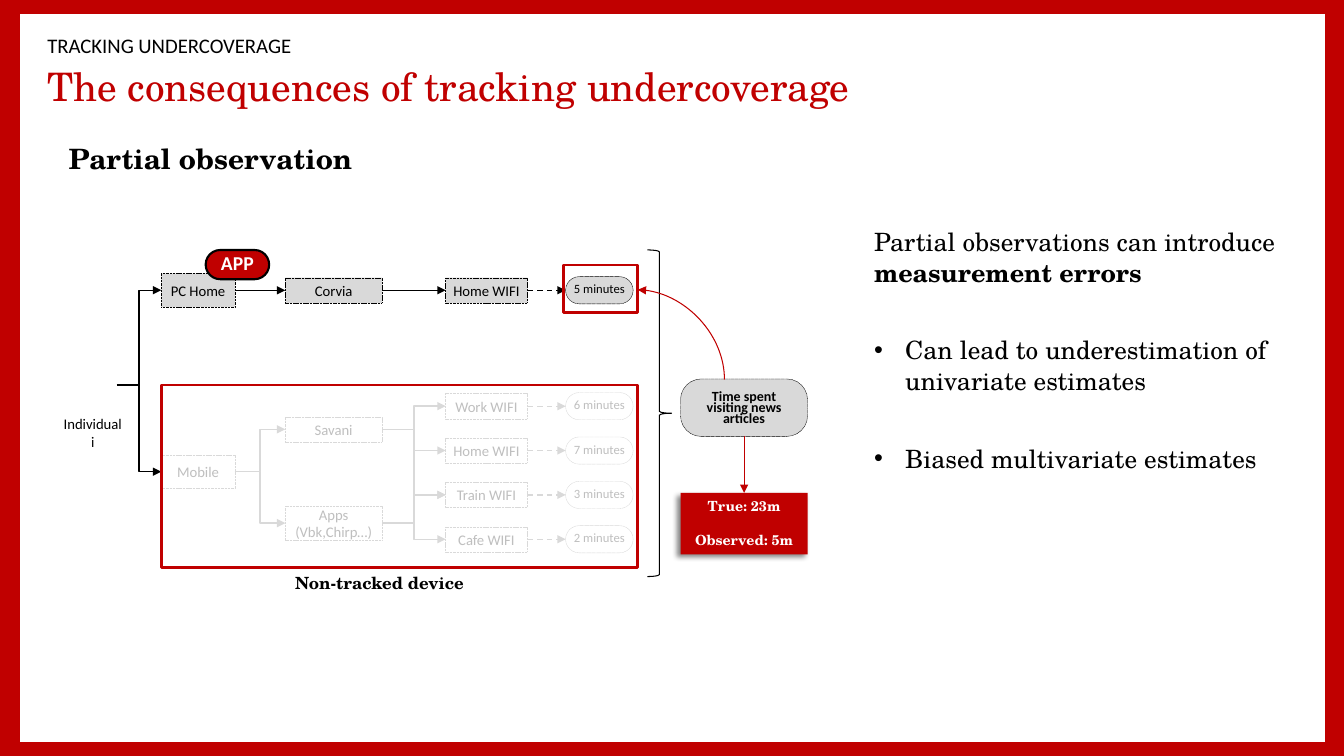
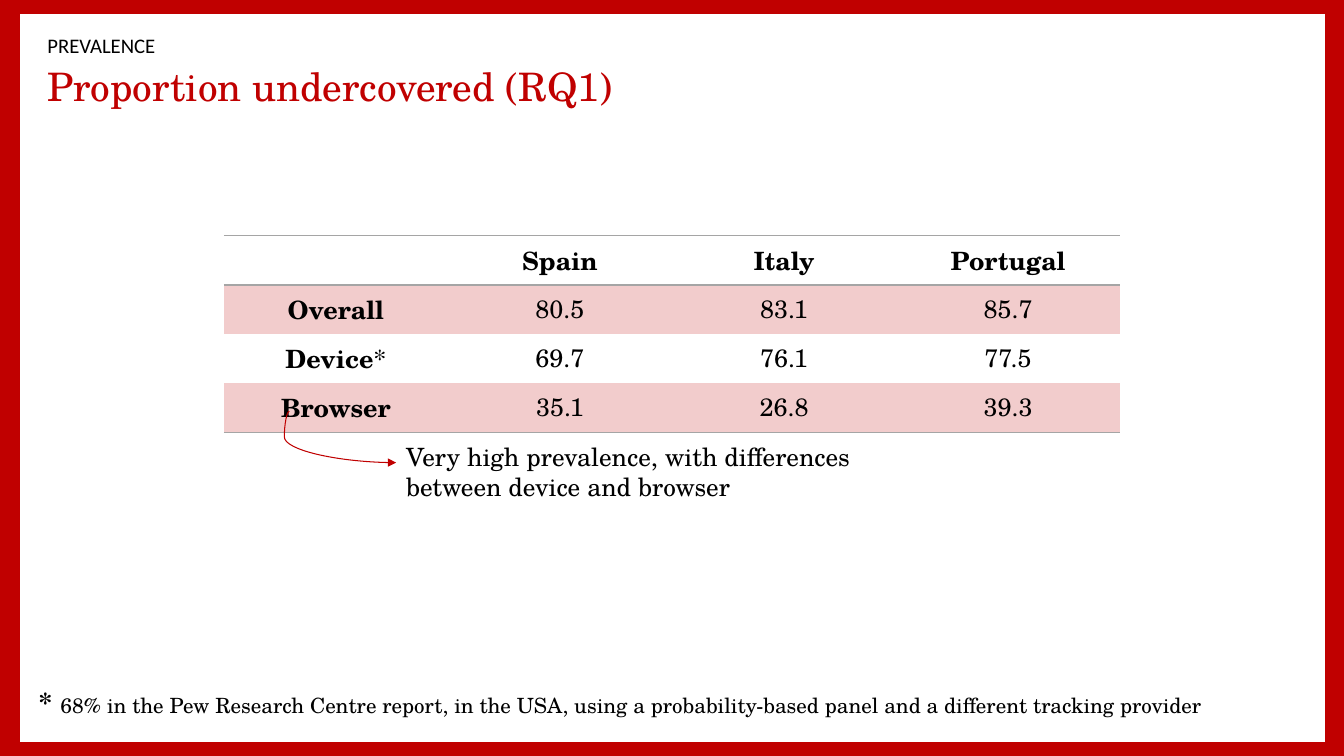
import pptx
import pptx.dml.color
import pptx.enum.dml
import pptx.enum.shapes
import pptx.enum.text
import pptx.oxml
import pptx.oxml.ns
import pptx.util

Inches = pptx.util.Inches
Pt = pptx.util.Pt
SHAPE = pptx.enum.shapes.MSO_SHAPE
CONNECTOR = pptx.enum.shapes.MSO_CONNECTOR
DASH = pptx.enum.dml.MSO_LINE
ALIGN = pptx.enum.text.PP_ALIGN
ANCHOR = pptx.enum.text.MSO_ANCHOR
qn = pptx.oxml.ns.qn
nsdecls = pptx.oxml.ns.nsdecls
parse_xml = pptx.oxml.parse_xml
color = pptx.dml.color.RGBColor.from_string

RED, BLACK, WHITE = "C00000", "000000", "FFFFFF"
GREY, FADED, PINK, RULE = "D9D9D9", "BFBFBF", "F2CCCC", "A5A5A5"
SERIF, SANS = "TeX Gyre Schola", "Calibri"
CENTERED = {"alignment": ALIGN.CENTER}
TIGHT = {"word_wrap": True, "vertical_anchor": ANCHOR.MIDDLE, "margin_left": Inches(0.04),
         "margin_right": Inches(0.04), "margin_top": Inches(0.04), "margin_bottom": Inches(0.04)}


def write(frame, paragraphs, size, font=SERIF, ink=BLACK, bold=False, layout=None, box=None):
    for name, value in {"word_wrap": True, **(box or {})}.items():
        setattr(frame, name, value)
    for index, runs in enumerate(paragraphs):
        paragraph = frame.paragraphs[0] if index == 0 else frame.add_paragraph()
        for name, value in (layout or {}).items():
            setattr(paragraph, name, value)
        for text, changes in runs:
            run = paragraph.add_run()
            run.text = text
            run.font.color.rgb = color(ink)
            values = {"name": font, "size": Pt(size), "bold": bold, **changes}
            for name, value in values.items():
                setattr(run.font, name, value)


def style(shape, fill=None, line=None, width=0.25, dash=None):
    shape.shadow.inherit = False
    if fill:
        shape.fill.solid()
        shape.fill.fore_color.rgb = color(fill)
    else:
        shape.fill.background()
    if line:
        shape.line.color.rgb = color(line)
        shape.line.width = Pt(width)
        shape.line.dash_style = dash
    else:
        shape.line.fill.background()


presentation = pptx.Presentation()
presentation.slide_width = Inches(13.33)
presentation.slide_height = Inches(7.5)

layout = presentation.slide_layouts.get_by_name("Two Content")
layout.background.fill.solid()
layout.background.fill.fore_color.rgb = color(RED)
for idx, place in {0: (0.37, 0.65, 11.67, 0.47), 1: (0.37, 0.32, 11.28, 0.31)}.items():
    placeholder = layout.placeholders.get(idx=idx)
    for name, value in zip(("left", "top", "width", "height"), place):
        setattr(placeholder, name, Inches(value))

pages = [
    ("The consequences of tracking undercoverage", "TRACKING UNDERCOVERAGE",
     [("Partial observation", {"bold": True})], 20, (0.58, 1.39, 12.17, 5.21)),
    ("Proportion undercovered (RQ1)", "PREVALENCE",
     [("* ", {"bold": True, "size": Pt(20)}),
      ("68% in the Pew Research Centre report, in the USA, using a probability-based panel "
       "and a different tracking provider", {})], 15, (0.28, 6.79, 12.17, 0.47)),
]
for title, kicker, body, size, place in pages:
    slide = presentation.slides.add_slide(layout)
    for name, value in zip(("left", "top", "width", "height"), place):
        setattr(slide.placeholders[2], name, Inches(value))
    left_aligned = {"alignment": ALIGN.LEFT, "line_spacing": 0.9, "space_before": Pt(0)}
    fixed = {"auto_size": pptx.enum.text.MSO_AUTO_SIZE.NONE, "vertical_anchor": ANCHOR.MIDDLE}
    write(slide.shapes.title.text_frame, [[(title, {})]], 28, ink=RED,
          layout=left_aligned, box=fixed)
    write(slide.placeholders[1].text_frame, [[(kicker, {})]], 14.8, SANS,
          layout={**left_aligned, "line_spacing": 0.8}, box=fixed)
    write(slide.placeholders[2].text_frame, [body], size,
          layout=left_aligned, box={**fixed, "vertical_anchor": ANCHOR.TOP})
    for idx in (1, 2):
        properties = slide.placeholders[idx].text_frame.paragraphs[0]._p.get_or_add_pPr()
        properties.set("marL", "0")
        properties.set("indent", "0")
        properties.append(parse_xml(f"<a:buNone {nsdecls('a')}/>"))

diagram_slide, table_slide = presentation.slides
panel = diagram_slide.shapes.add_shape(
    SHAPE.RECTANGLE, Inches(0.2), Inches(0.14), Inches(12.94), Inches(7.22))
style(panel, WHITE)
layout.shapes._spTree.insert(2, panel._element)

shapes = diagram_slide.shapes
nodes = {}
node_rows = [
    ("computer", "PC Home", 1.6, 2.88, 0.73, 0.33, True),
    ("phone", "Mobile", 1.6, 4.68, 0.73, 0.33, False),
    ("tracked browser", "Corvia", 2.83, 2.88, 0.96, 0.25, True),
    ("browser", "Savani", 2.83, 4.26, 0.96, 0.25, False),
    ("apps", "Apps (Vbk,Chirp…)", 2.83, 5.19, 0.96, 0.34, False),
    ("tracked wifi", "Home WIFI", 4.42, 2.88, 0.81, 0.25, True),
    ("tracked time", "5 minutes", 5.61, 2.88, 0.67, 0.27, True),
]
networks = [("Work", 6), ("Home", 7), ("Train", 3), ("Cafe", 2)]
for index, (network, minutes) in enumerate(networks):
    middle = 4.03 + 0.44 * index
    node_rows.append((network, f"{network} WIFI", 4.42, middle, 0.81, 0.25, False))
    node_rows.append((f"{network} time", f"{minutes} minutes", 5.61, middle, 0.67, 0.27, False))

for key, text, left, middle, width, height, tracked in node_rows:
    is_time = key.endswith("time")
    node = shapes.add_shape(SHAPE.ROUNDED_RECTANGLE if is_time else SHAPE.RECTANGLE,
                            Inches(left), Inches(middle - height / 2), Inches(width), Inches(height))
    style(node, GREY if tracked else WHITE, BLACK if tracked else GREY, dash=DASH.SQUARE_DOT)
    text_layout, box = CENTERED, TIGHT
    if is_time:
        node.adjustments[0] = 0.5
        text_layout = {**CENTERED, "line_spacing": Pt(6)}
        box = {**TIGHT, "margin_top": Inches(0.08)}
    write(node.text_frame, [[(text, {})]], 9 if is_time else 10.5, SANS,
          BLACK if tracked else FADED, layout=text_layout, box=box)
    nodes[key] = node

connectors = []
links = [
    ("computer", "tracked browser"), ("tracked browser", "tracked wifi"),
    ("tracked wifi", "tracked time"), ("phone", "apps"), ("phone", "browser"),
    ("apps", "Cafe"), ("apps", "Train"),
    ("browser", "Work"), ("browser", "Home"), ("browser", "Train"),
]
links += [(network, f"{network} time") for network, minutes in networks]
for start_key, end_key in links:
    start, end = nodes[start_key], nodes[end_key]
    bent = start_key in ("phone", "apps", "browser")
    connector = shapes.add_connector(
        CONNECTOR.ELBOW if bent else CONNECTOR.STRAIGHT,
        start.left + start.width, start.top + start.height // 2,
        end.left, end.top + end.height // 2)
    connector.begin_connect(start, 3)
    connector.end_connect(end, 1)
    if end_key.endswith("time"):
        connector.line.dash_style = DASH.DASH
    connectors.append((connector, BLACK if "tracked" in end_key else GREY, 1))

for key in ("phone", "computer"):
    device = nodes[key]
    connector = shapes.add_connector(CONNECTOR.ELBOW, Inches(1.16), Inches(3.82),
                                     device.left, device.top + device.height // 2)
    connector.end_connect(device, 1)
    connectors.append((connector, BLACK, 1))

individual = shapes.add_shape(
    SHAPE.RECTANGLE, Inches(0.58), Inches(4.13), Inches(0.68), Inches(0.33))
style(individual, WHITE)
write(individual.text_frame, [[("Individual i", {})]], 10.5, SANS, layout=CENTERED, box=TIGHT)

outcome = shapes.add_shape(
    SHAPE.ROUNDED_RECTANGLE, Inches(6.75), Inches(3.76), Inches(1.26), Inches(0.57))
outcome.adjustments[0] = 0.36
style(outcome, GREY, BLACK, dash=DASH.SQUARE_DOT)
write(outcome.text_frame, [[("Time spent visiting news articles", {})]], 10, SANS, bold=True,
      layout={**CENTERED, "line_spacing": Pt(8)}, box={**TIGHT, "margin_top": Inches(0.08)})

tracker = shapes.add_shape(
    SHAPE.ROUNDED_RECTANGLE, Inches(2.04), Inches(2.48), Inches(0.63), Inches(0.29))
tracker.adjustments[0] = 0.5
style(tracker, RED, BLACK, 1.5)
write(tracker.text_frame, [[("APP", {})]], 14, SANS, WHITE, True,
      {**CENTERED, "line_spacing": Pt(6)}, {**TIGHT, "margin_top": Inches(0.16)})

brace = shapes.add_shape(
    SHAPE.RIGHT_BRACE, Inches(6.42), Inches(2.48), Inches(0.24), Inches(3.24))
brace.adjustments[0] = 0.08
brace.adjustments[1] = 0.5
style(brace, line=BLACK, width=0.75)

for place in ((5.59, 2.63, 0.73, 0.47), (1.6, 3.82, 4.72, 1.81)):
    highlight = shapes.add_shape(SHAPE.RECTANGLE, *map(Inches, place))
    style(highlight, line=RED, width=2)

result = shapes.add_shape(
    SHAPE.RECTANGLE, Inches(6.75), Inches(4.89), Inches(1.26), Inches(0.61))
style(result, RED)
result._element.spPr.find(qn("a:effectLst")).append(parse_xml(
    f'<a:outerShdw {nsdecls("a")} blurRad="50800" dist="38100" dir="8100000" algn="tr" '
    'rotWithShape="0"><a:srgbClr val="000000"><a:alpha val="48000"/></a:srgbClr></a:outerShdw>'))
write(result.text_frame, [[("True: 23m", {})], [("Observed: 5m", {})]], 10, ink=WHITE, bold=True,
      layout=CENTERED, box={"vertical_anchor": ANCHOR.TOP})
result.text_frame.paragraphs[1].space_before = Pt(12)

connector = shapes.add_connector(
    CONNECTOR.STRAIGHT, Inches(7.38), Inches(4.33), Inches(7.38), Inches(4.89))
connector.begin_connect(outcome, 2)
connector.end_connect(result, 0)
connectors.append((connector, RED, 0.75))

observed_curve = shapes.add_connector(
    CONNECTOR.CURVE, Inches(6.31), Inches(3.75), Inches(7.2), Inches(2.89))
observed_curve._element.spPr.find(qn("a:prstGeom")).set("prst", "curvedConnector2")
observed_curve._element.spPr.find(qn("a:xfrm")).set("rot", "16200000")
connectors.append((observed_curve, RED, 0.75))

caption = shapes.add_textbox(Inches(2.83), Inches(5.63), Inches(6.67), Inches(0.3))
write(caption.text_frame, [[("Non-tracked device", {})]], 12, bold=True)

consequences = shapes.add_textbox(Inches(8.57), Inches(2.2), Inches(5.11), Inches(2.56))
write(consequences.text_frame, [
    [("Partial observations can introduce ", {}), ("measurement errors", {"bold": True})],
    [("Can lead to underestimation of univariate estimates", {})],
    [("Biased multivariate estimates", {})],
], 18)
for paragraph in consequences.text_frame.paragraphs[1:]:
    paragraph.space_before = Pt(34)
    properties = paragraph._p.get_or_add_pPr()
    properties.set("marL", str(Inches(0.31)))
    properties.set("indent", str(-Inches(0.31)))
    properties.append(parse_xml(f'<a:buFont {nsdecls("a")} typeface="Arial"/>'))
    properties.append(parse_xml(f'<a:buChar {nsdecls("a")} char="•"/>'))

table_rows = [
    ("", "Spain", "Italy", "Portugal"),
    ("Overall", "80.5", "83.1", "85.7"),
    ("Device*", "69.7", "76.1", "77.5"),
    ("Browser", "35.1", "26.8", "39.3"),
]
table = table_slide.shapes.add_table(
    4, 4, Inches(2.22), Inches(2.34), Inches(8.89), Inches(1.62)).table
table._tbl.tblPr.find(qn("a:tableStyleId")).text = "{2D5ABB26-0587-4C30-8999-92F81FD0307C}"
for row_index, values in enumerate(table_rows):
    for column_index, value in enumerate(values):
        cell = table.cell(row_index, column_index)
        for edge in {0: ("lnT", "lnB"), 3: ("lnB",)}.get(row_index, ()):
            cell._tc.get_or_add_tcPr().append(parse_xml(
                f'<a:{edge} {nsdecls("a")} w="12700"><a:solidFill><a:srgbClr val="{RULE}"/>'
                f'</a:solidFill></a:{edge}>'))
        if row_index % 2:
            cell.fill.solid()
            cell.fill.fore_color.rgb = color(PINK)
        else:
            cell.fill.background()
        runs = [(value.rstrip("*"), {})]
        if value.endswith("*"):
            runs.append(("*", {"bold": False}))
        if value:
            write(cell.text_frame, [runs], 18, bold=row_index == 0 or column_index == 0,
                  layout=CENTERED)

remark_curve = table_slide.shapes.add_connector(
    CONNECTOR.CURVE, Inches(2.87), Inches(4.08), Inches(3.93), Inches(4.59))
remark_curve._element.spPr.find(qn("a:prstGeom")).get_or_add_avLst().append(
    parse_xml(f'<a:gd {nsdecls("a")} name="adj1" fmla="val -4700"/>'))
connectors.append((remark_curve, RED, 0.75))

remark = table_slide.shapes.add_textbox(Inches(3.93), Inches(4.33), Inches(5.25), Inches(0.71))
write(remark.text_frame,
      [[("Very high prevalence, with differences between device and browser", {})]], 18)

for connector, ink, width in connectors:
    connector.line.color.rgb = color(ink)
    connector.line.width = Pt(width)
    connector.line._get_or_add_ln().append(
        parse_xml(f'<a:tailEnd {nsdecls("a")} type="triangle"/>'))
    connector._element.spPr.append(parse_xml(f"<a:effectLst {nsdecls('a')}/>"))

presentation.save("out.pptx")
